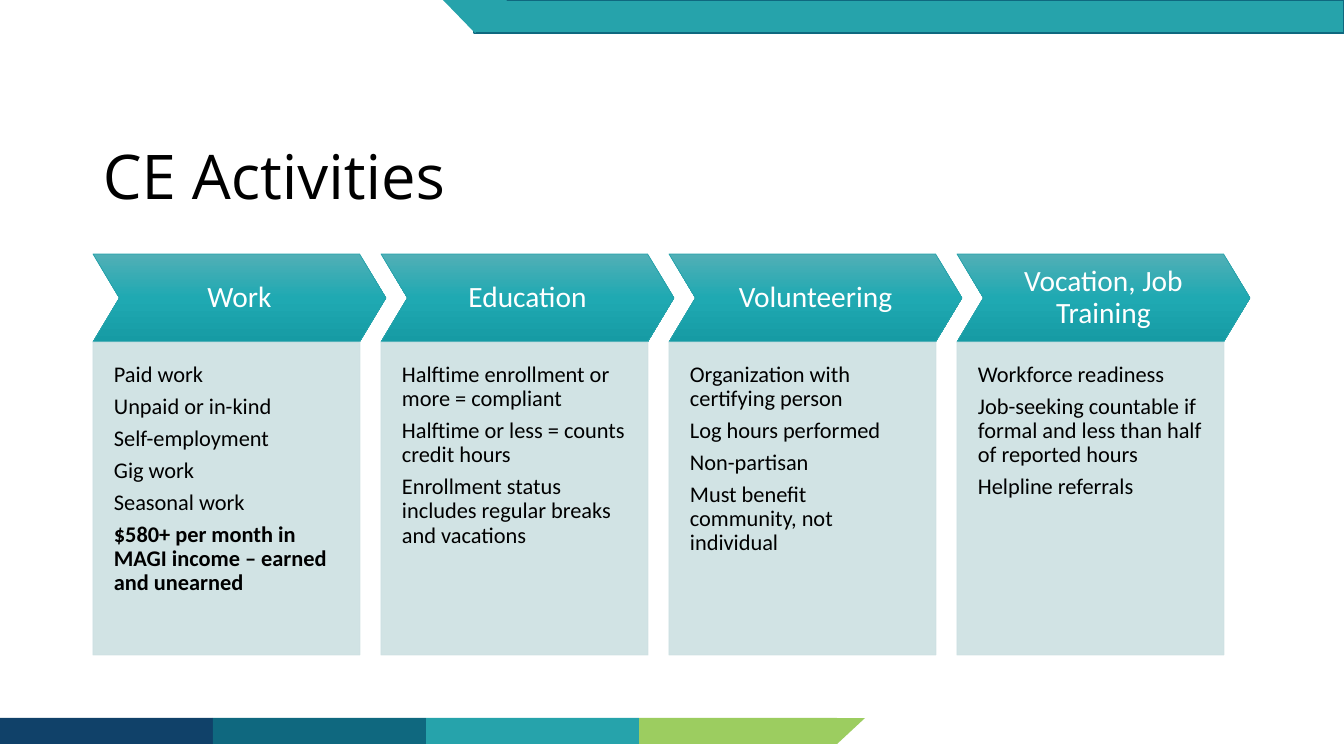
"""Build the CE Activities slide with four labelled columns."""
from lxml.etree import SubElement
from pptx import Presentation
from pptx.dml.color import RGBColor
from pptx.enum.shapes import MSO_SHAPE
from pptx.enum.text import MSO_ANCHOR, PP_ALIGN
from pptx.oxml import parse_xml
from pptx.oxml.ns import nsdecls, qn
from pptx.util import Pt

TITLE = "CE Activities"
CARDS = [
    ("Work", ["Paid work", "Unpaid or in-kind", "Self-employment", "Gig work", "Seasonal work",
              "$580+ per month in MAGI income – earned and unearned"]),
    ("Education", ["Halftime enrollment or more = compliant",
                   "Halftime or less = counts credit hours",
                   "Enrollment status includes regular breaks and vacations"]),
    ("Volunteering", ["Organization with certifying person", "Log hours performed",
                      "Non-partisan", "Must benefit community, not individual"]),
    ("Vocation, Job Training", ["Workforce readiness",
                                "Job-seeking countable if formal and less than half of reported hours",
                                "Helpline referrals"]),
]
BOLD = "$580+"
NAVY, DEEP, TEAL, LIME, PALE = "104169", "0F687F", "26A3AB", "9CCD60", "CDE0E2"
STOPS = [(0, "51AFB6"), (50, "1FA9B2"), (100, "169BA4")]
BANDS = [(NAVY, 213), (DEEP, 213), (TEAL, 213), (LIME, 198)]
LEFT, STEP = 93, 288
HEAD_TOP, HEAD_W, HEAD_H = 254, 293, 88
BODY_W, BODY_H = 267, 313
FOOT_TOP, FOOT_H, TOP_H = 718, 26, 33
HEAD_STYLE = {"size": Pt(21), "name": "Calibri", "color": "FFFFFF"}
BODY_STYLE = {"size": Pt(16), "name": "Calibri", "color": "000000"}
TITLE_STYLE = {"size": Pt(44), "name": "Open Sans", "color": "000000"}


def px(n):
    return round(n * 914400 / 100.8)


def rgb(code):
    return RGBColor.from_string(code)


def draw(kind, box, color, line=None, width=1):
    shape = slide.shapes.add_shape(kind, *map(px, box))
    shape.shadow.inherit = False
    shape.fill.solid()
    shape.fill.fore_color.rgb = rgb(color)
    if line:
        shape.line.color.rgb = rgb(line)
        shape.line.width = Pt(width)
    else:
        shape.line.fill.background()
    return shape


def fade(shape):
    for color in shape._element.spPr.iter(qn("a:srgbClr")):
        SubElement(color, qn("a:alpha"), val="90000")


def shade(shape):
    marks = "".join(f'<a:gs pos="{at * 1000}"><a:srgbClr val="{color}"/></a:gs>'
                    for at, color in STOPS)
    grad = parse_xml(f'<a:gradFill {nsdecls("a")} rotWithShape="1"><a:gsLst>{marks}</a:gsLst>'
                     '<a:lin ang="5400000" scaled="0"/></a:gradFill>')
    props = shape._element.spPr
    props.replace(props.find(qn("a:solidFill")), grad)


def write(shape, lines, style, align, anchor, pads=None):
    frame = shape.text_frame
    frame.word_wrap = True
    frame.vertical_anchor = anchor
    if pads:
        for side, pad in zip(("left", "top", "right", "bottom"), pads):
            setattr(frame, f"margin_{side}", px(pad))
    for i, line in enumerate(lines):
        para = frame.paragraphs[0] if i == 0 else frame.add_paragraph()
        para.alignment = align
        para.line_spacing = 0.9
        para.space_after = Pt(style["size"].pt * 0.35)
        run = para.add_run()
        run.text = line
        for key, value in style.items():
            if key == "color":
                run.font.color.rgb = rgb(value)
            else:
                setattr(run.font, key, value)
        run.font.bold = line.startswith(BOLD)


deck = Presentation()
deck.slide_width, deck.slide_height = px(1344), px(756)
slide = deck.slides.add_slide(deck.slide_layouts[6])

x = 0
for color, wide in BANDS:
    draw(MSO_SHAPE.RECTANGLE, (x, FOOT_TOP, wide, FOOT_H), color)
    x += wide
tip = draw(MSO_SHAPE.ISOSCELES_TRIANGLE, (809, FOOT_TOP, 56, FOOT_H), LIME)
draw(MSO_SHAPE.RECTANGLE, (474, 0, 870, TOP_H), TEAL, DEEP)
notch = draw(MSO_SHAPE.ISOSCELES_TRIANGLE, (443, 0, 64, TOP_H), TEAL)
tip.rotation = notch.rotation = 180

title = slide.shapes.add_textbox(*map(px, (93, 107, 1159, 146)))
write(title, [TITLE], TITLE_STYLE, PP_ALIGN.LEFT, MSO_ANCHOR.MIDDLE)

for i, (name, items) in enumerate(CARDS):
    x = LEFT + i * STEP
    head = draw(MSO_SHAPE.CHEVRON, (x, HEAD_TOP, HEAD_W, HEAD_H), TEAL, TEAL, 0.5)
    head.adjustments[0] = 0.3
    shade(head)
    write(head, [name], HEAD_STYLE, PP_ALIGN.CENTER, MSO_ANCHOR.MIDDLE, (11, 11, 11, 11))
    body = draw(MSO_SHAPE.RECTANGLE, (x, HEAD_TOP + HEAD_H, BODY_W, BODY_H), PALE, PALE, 0.5)
    fade(body)
    write(body, items, BODY_STYLE, PP_ALIGN.LEFT, MSO_ANCHOR.TOP, (21, 21, 21, 42))

deck.save("out.pptx")
